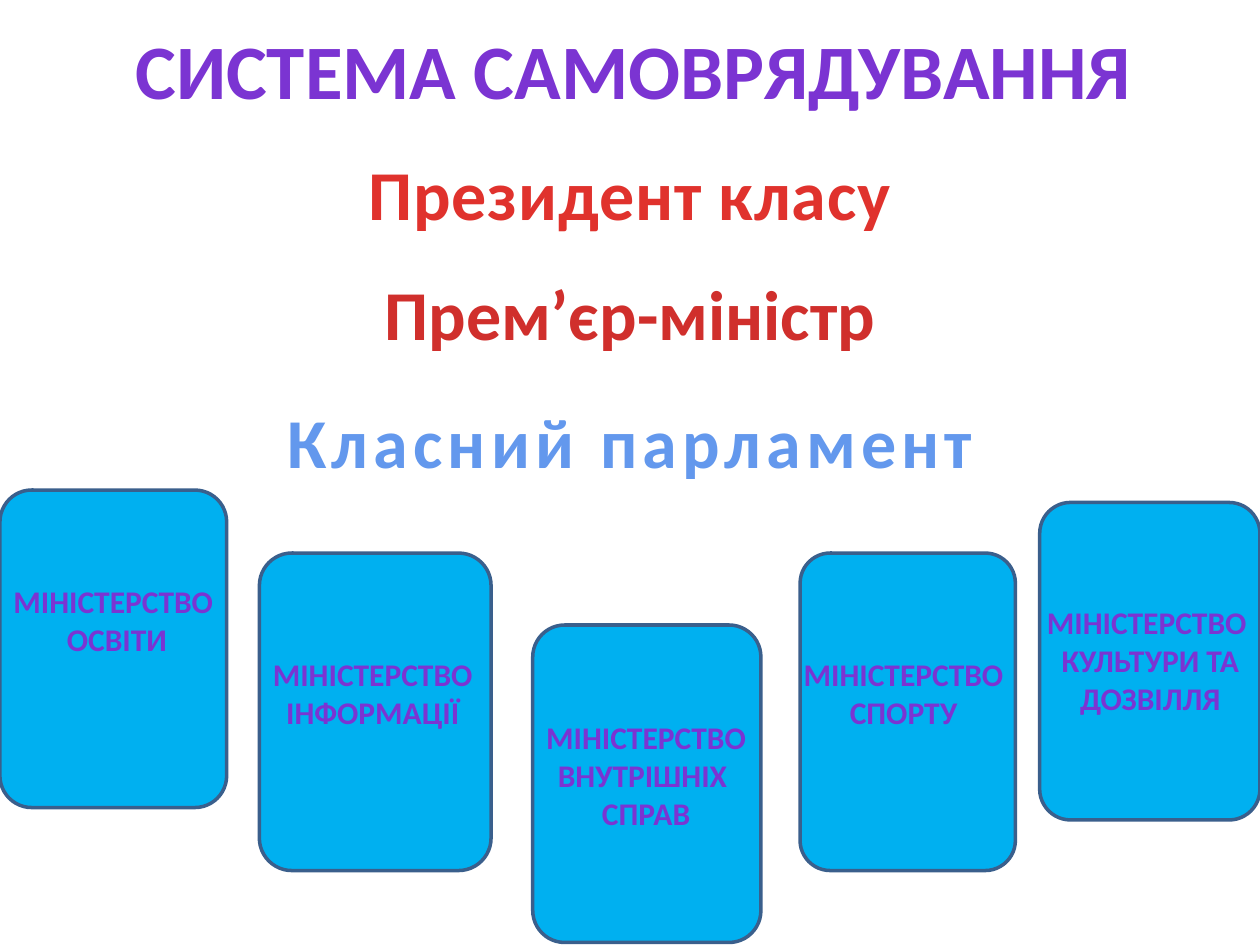
from dataclasses import dataclass

from pptx import Presentation
from pptx.dml.color import RGBColor as RGB
from pptx.enum.shapes import MSO_SHAPE as Shape
from pptx.enum.text import MSO_ANCHOR as Anchor, MSO_AUTO_SIZE as Auto, PP_ALIGN as Align
from pptx.util import Cm, Pt


@dataclass(frozen=True)
class Theme:
    font: str = "Calibri"
    violet: str = "7B34D2"
    red: str = "E0322D"
    dark: str = "D02F2C"
    blue: str = "6398ED"
    card: str = "00B0F0"
    edge: str = "3A5F8C"
    title: int = 44
    head: int = 40
    label: int = 18


THEME = Theme()
CARD_H = 6.4

# text, left, top, width, colour, letter spacing in points
HEADS = [
    ("Президент класу", 7.11, 2.92, 11.18, THEME.red, 0.5),
    ("Прем’єр-міністр", 7.44, 5.33, 10.52, THEME.dark, 0),
    ("Класний парламент", 5.41, 7.9, 14.6, THEME.blue, 3),
]

# card left, top, width; label left, top, width; lines
CARDS = [
    ((0, 9.88, 4.57), (0, 11.61, 4.57), ["МІНІСТЕРСТВО", " ОСВІТИ"]),
    ((5.23, 11.15, 4.67), (5.23, 13.08, 4.57), ["МІНІСТЕРСТВО", "ІНФОРМАЦІЇ"]),
    ((10.74, 12.6, 4.6), (10.74, 14.35, 4.57),
     ["МІНІСТЕРСТВО", "ВНУТРІШНІХ ", "СПРАВ"]),
    ((16.13, 11.15, 4.34), (15.93, 13.08, 4.57), ["МІНІСТЕРСТВО", "СПОРТУ"]),
    ((20.96, 10.13, 4.44), (20.83, 12.04, 4.72),
     ["МІНІСТЕРСТВО ", "КУЛЬТУРИ ТА", "ДОЗВІЛЛЯ"]),
]


def write(shape, lines, size, color, gap=0):
    """Fill a shape with centred bold lines that do not wrap."""
    frame = shape.text_frame
    frame.text = "\n".join(lines)
    frame.word_wrap = False
    frame.auto_size = Auto.SHAPE_TO_FIT_TEXT
    frame.vertical_anchor = Anchor.TOP
    for par in frame.paragraphs:
        par.alignment = Align.CENTER
        font = par.font
        font.name, font.size, font.bold = THEME.font, Pt(size), True
        font.color.rgb = RGB.from_string(color)
        if gap:
            for run in par.runs:
                run._r.get_or_add_rPr().set("spc", str(int(gap * 100)))


def add_title(slide, text):
    title = slide.shapes.title
    title.left, title.top = Cm(2.39), Cm(0.33)
    title.width, title.height = Cm(20.78), Cm(2.13)
    write(title, [text], THEME.title, THEME.violet)


def add_text(slide, place, high, lines, size, color, gap=0):
    left, top, wide = place
    box = slide.shapes.add_textbox(Cm(left), Cm(top), Cm(wide), Cm(high))
    write(box, lines, size, color, gap)


def add_card(slide, place):
    left, top, wide = place
    card = slide.shapes.add_shape(
        Shape.ROUNDED_RECTANGLE, Cm(left), Cm(top), Cm(wide), Cm(CARD_H))
    card.adjustments[0] = 0.14
    card.shadow.inherit = False
    card.fill.solid()
    card.fill.fore_color.rgb = RGB.from_string(THEME.card)
    card.line.color.rgb = RGB.from_string(THEME.edge)
    card.line.width = Pt(2)


def main():
    deck = Presentation()
    deck.slide_width, deck.slide_height = Cm(25.4), Cm(19.05)
    slide = deck.slides.add_slide(deck.slide_layouts[5])

    # Title and the levels of self-government
    add_title(slide, "СИСТЕМА САМОВРЯДУВАННЯ")
    for text, left, top, wide, color, gap in HEADS:
        add_text(slide, (left, top, wide), 1.96, [text], THEME.head, color, gap)

    # Ministries
    for place, spot, lines in CARDS:
        add_card(slide, place)
        high = 0.26 + 0.77 * len(lines)
        add_text(slide, spot, high, lines, THEME.label, THEME.violet)

    deck.save("out.pptx")


if __name__ == "__main__":
    main()
